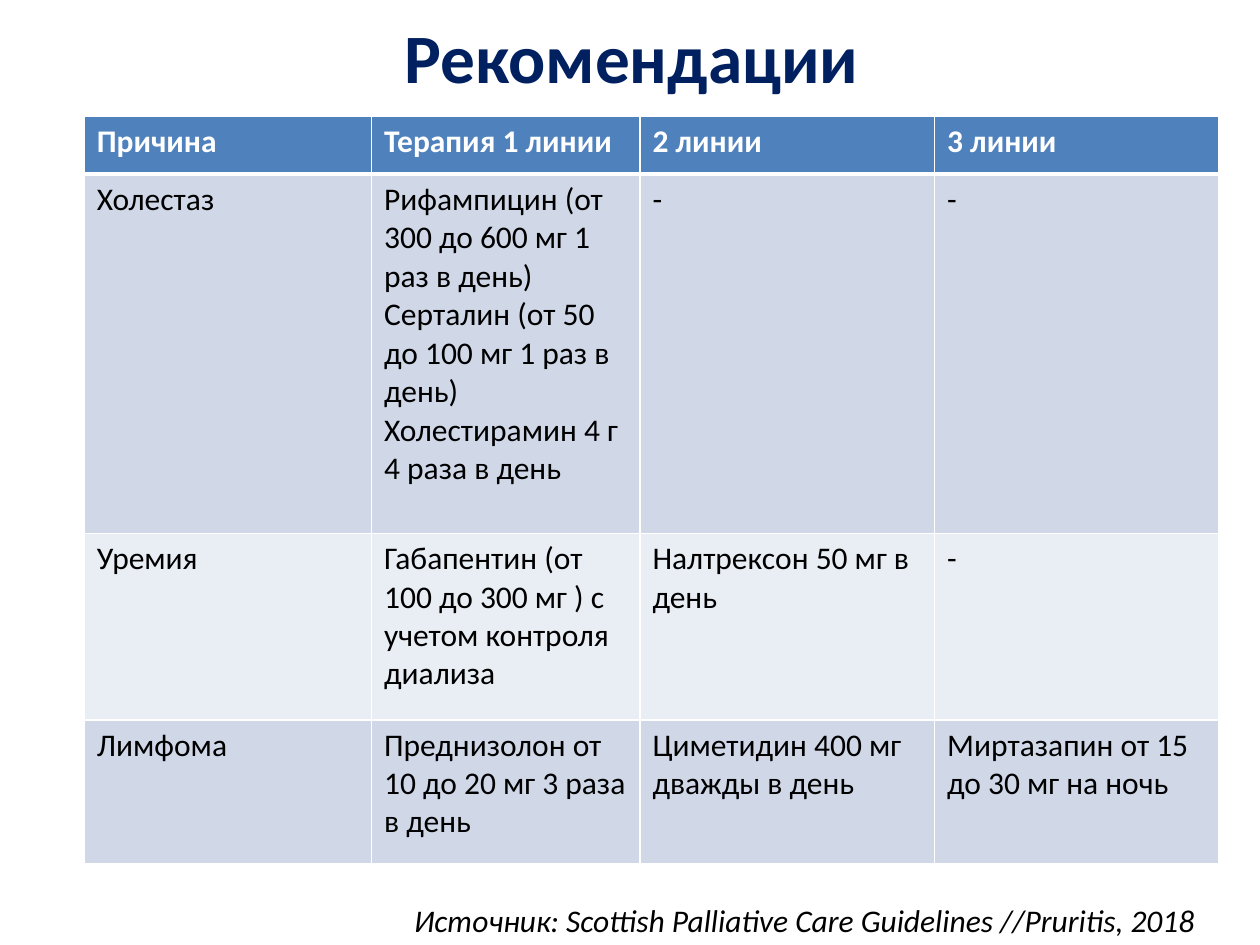
from dataclasses import dataclass

from lxml.etree import SubElement
from pptx import Presentation
from pptx.dml.color import RGBColor as Rgb
from pptx.enum.text import MSO_ANCHOR as Anchor, MSO_AUTO_SIZE as AutoSize, PP_ALIGN as Align
from pptx.oxml.ns import qn
from pptx.util import Cm, Pt


@dataclass(frozen=True)
class Theme:
    font: str = "Calibri"
    title_size: float = 39.6
    text_size: float = 18
    title: str = "002060"
    text: str = "000000"
    header_text: str = "FFFFFF"
    header_fill: str = "4F81BD"
    odd_fill: str = "D0D8E8"
    even_fill: str = "E9EDF4"
    border: str = "FFFFFF"


theme = Theme()


def style_text(frame, size, color, bold=False, italic=False):
    for paragraph in frame.paragraphs:
        for run in paragraph.runs:
            run.font.name = theme.font
            run.font.size = Pt(size)
            run.font.bold = bold
            run.font.italic = italic
            run.font.color.rgb = Rgb.from_string(color)


def add_border(cell, side, width):
    line = SubElement(cell._tc.get_or_add_tcPr(), qn(f"a:ln{side}"), w=str(Pt(width)))
    fill = SubElement(line, qn("a:solidFill"))
    SubElement(fill, qn("a:srgbClr"), val=theme.border)


deck = Presentation()
deck.slide_width, deck.slide_height = Cm(25.4), Cm(19.05)
slide = deck.slides.add_slide(deck.slide_layouts[5])

title = slide.shapes.title
title.left, title.top, title.width, title.height = Cm(1.3), Cm(0.33), Cm(22.86), Cm(1.6)
title.text_frame.text = "Рекомендации"
title.text_frame.auto_size = AutoSize.NONE
title.text_frame.vertical_anchor = Anchor.MIDDLE
title.text_frame.paragraphs[0].alignment = Align.CENTER
style_text(title.text_frame, theme.title_size, theme.title, bold=True)

therapies = [
    ["Причина", "Терапия 1 линии", "2 линии", "3 линии"],
    [
        "Холестаз",
        "Рифампицин (от 300 до 600 мг 1 раз в день)\n"
        "Серталин (от 50 до 100 мг 1 раз в день)\n"
        "Холестирамин 4 г 4 раза в день",
        "-",
        "-",
    ],
    [
        "Уремия",
        "Габапентин (от 100 до 300 мг ) с учетом контроля диализа",
        "Налтрексон 50 мг в день",
        "-",
    ],
    [
        "Лимфома",
        "Преднизолон от 10 до 20 мг 3 раза в день",
        "Циметидин 400 мг дважды в день",
        "Миртазапин от 15 до 30 мг на ночь",
    ],
]
column_widths = [5.79, 5.41, 5.94, 5.72]
row_heights = [1.17, 7.24, 3.76, 2.9]

table = slide.shapes.add_table(
    len(therapies), len(column_widths), Cm(1.7), Cm(2.34),
    Cm(sum(column_widths)), Cm(sum(row_heights)),
).table
for column, width in zip(table.columns, column_widths):
    column.width = Cm(width)
for row, height in zip(table.rows, row_heights):
    row.height = Cm(height)

for row_index, therapy in enumerate(therapies):
    is_header = row_index == 0
    band_fill = theme.odd_fill if row_index % 2 else theme.even_fill
    border_widths = {
        "L": 1,
        "R": 1,
        "T": 3 if row_index == 1 else 1,
        "B": 3 if is_header else 1,
    }
    for column_index, entry in enumerate(therapy):
        cell = table.cell(row_index, column_index)
        cell.text_frame.text = entry
        style_text(
            cell.text_frame, theme.text_size,
            theme.header_text if is_header else theme.text, bold=is_header,
        )
        for side, width in border_widths.items():
            add_border(cell, side, width)
        cell.fill.solid()
        cell.fill.fore_color.rgb = Rgb.from_string(theme.header_fill if is_header else band_fill)

citation = slide.shapes.add_textbox(Cm(8.1), Cm(18.03), Cm(16.46), Cm(1.02)).text_frame
citation.word_wrap = False
citation.auto_size = AutoSize.SHAPE_TO_FIT_TEXT
citation.text = "Источник: Scottish Palliative Care Guidelines\u00a0//Pruritis, 2018"
style_text(citation, theme.text_size, theme.text, italic=True)

deck.save("out.pptx")
